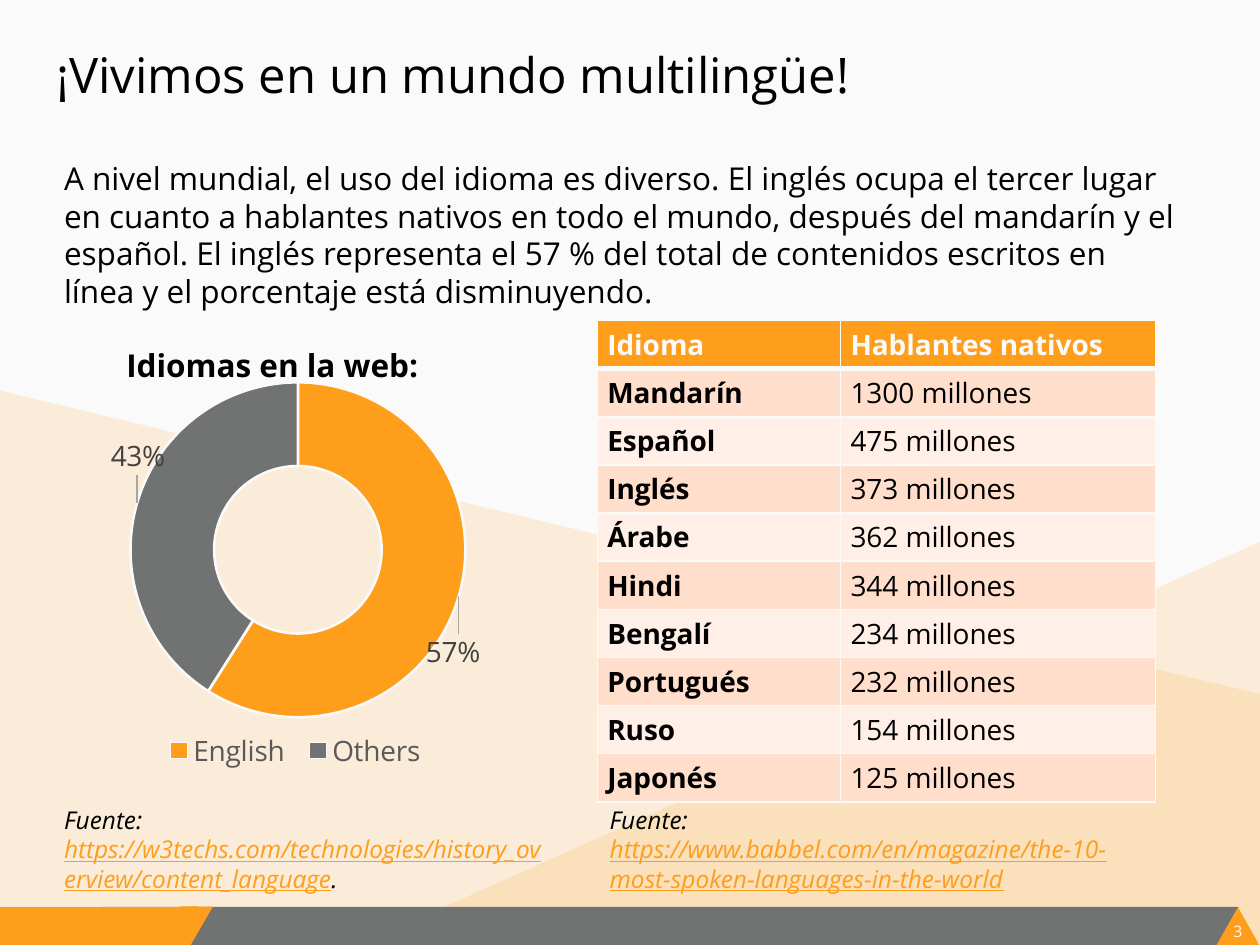
from dataclasses import dataclass

from lxml import etree
from pptx import Presentation
from pptx import util as u
from pptx.chart.data import CategoryChartData
from pptx.dml.color import RGBColor
from pptx.enum import chart as charts, shapes, text
from pptx.oxml import parse_xml
from pptx.oxml.ns import nsdecls, qn

COLORS = {
    "paper": "FAFAFA", "orange": "FF9E1B", "gray": "707372", "black": "000000",
    "peach": "FFDECB", "blush": "FFEFE7", "label": "404040", "legend": "595959",
    "leader": "A6A6A6",
}
FONT = "Open Sans"
LANGUAGES = [
    ("Idioma", "Hablantes nativos"), ("Mandarín", "1300 millones"),
    ("Español", "475 millones"), ("Inglés", "373 millones"),
    ("Árabe", "362 millones"), ("Hindi", "344 millones"),
    ("Bengalí", "234 millones"), ("Portugués", "232 millones"),
    ("Ruso", "154 millones"), ("Japonés", "125 millones"),
]


@dataclass
class Box:
    left: float
    top: float
    width: float
    height: float

    def place(self) -> list:
        return [u.Pt(value) for value in (self.left, self.top, self.width, self.height)]


@dataclass
class Style:
    size: float
    color: str = "black"
    bold: bool = False
    italic: bool = False
    underline: bool = False


@dataclass
class Bar:
    kind: shapes.MSO_SHAPE
    box: Box
    color: str


@dataclass
class Slice:
    name: str
    value: int
    label: str
    color: str
    shift: tuple


@dataclass
class TextBlock:
    box: Box
    runs: list
    inset: tuple = (7.2, 3.6)
    align: text.PP_ALIGN = text.PP_ALIGN.LEFT


BARS = [
    Bar(shapes.MSO_SHAPE.RECTANGLE, Box(58.3, 518.2, 649.4, 22.3), "gray"),
    Bar(shapes.MSO_SHAPE.RECTANGLE, Box(0, 518.4, 108, 22.3), "orange"),
    Bar(shapes.MSO_SHAPE.ISOSCELES_TRIANGLE, Box(694.8, 518.4, 25.2, 22.3), "orange"),
    Bar(shapes.MSO_SHAPE.PARALLELOGRAM, Box(96.5, 518, 25.2, 22.3), "orange"),
    Bar(shapes.MSO_SHAPE.RECTANGLE, Box(103, 518, 10.1, 9.4), "orange"),
]
BACKDROPS = [
    [(0, 223.2), (720, 396.7), (720, 538.6), (0, 540)],
    [(720, 309.6), (720, 540), (205.2, 540)],
]
SLICES = [
    Slice("English", 59, "57%", "orange", (0.07, 0.15)),
    Slice("Others", 41, "43%", "gray", (-0.08, -0.13)),
]
SOURCE = Style(14, italic=True)
LINK = Style(14, "orange", italic=True, underline=True)
TEXTS = [
    TextBlock(Box(701.3, 527, 12.2, 10.8), [("3", Style(9, "paper"))], (0, 0),
              text.PP_ALIGN.CENTER),
    TextBlock(Box(25.2, 21.6, 664.6, 90), [("¡Vivimos en un mundo multilingüe!", Style(28))]),
    TextBlock(Box(341.3, 456.5, 319, 58.3), [
        ("Fuente: ", SOURCE),
        ("https://www.babbel.com/en/magazine/the-10-most-spoken-languages-in-the-world", LINK)]),
    TextBlock(Box(29.5, 456.5, 293.8, 58.3), [
        ("Fuente: ", SOURCE),
        ("https://w3techs.com/technologies/history_overview/content_language", LINK),
        (".", SOURCE)]),
    TextBlock(Box(29.5, 87.2, 653.8, 95), [(
        "A nivel mundial, el uso del idioma es diverso. El inglés ocupa el tercer lugar "
        "en cuanto a hablantes nativos en todo el mundo, después del mandarín y el español. "
        "El inglés representa el 57 % del total de contenidos escritos en línea y el "
        "porcentaje está disminuyendo.", Style(18))]),
]


def rgb(name: str) -> RGBColor:
    return RGBColor.from_string(COLORS[name])


def paint(shape, color: str) -> None:
    shape.shadow.inherit = False
    shape.fill.solid()
    shape.fill.fore_color.rgb = rgb(color)
    shape.line.fill.background()


def format_font(font, style: Style) -> None:
    font.name, font.size = FONT, u.Pt(style.size)
    font.bold, font.italic, font.underline = style.bold, style.italic, style.underline
    font.color.rgb = rgb(style.color)


def draw_backdrop(slide, points: list) -> None:
    corners = [(u.Pt(x), u.Pt(y)) for x, y in points]
    builder = slide.shapes.build_freeform(*corners[0])
    builder.add_line_segments(corners[1:], close=True)
    shape = builder.convert_to_shape()
    paint(shape, "orange")
    color = shape.fill._xPr.find(".//" + qn("a:srgbClr"))
    etree.SubElement(color, qn("a:alpha"), val="15000")


def draw_text(slide, block: TextBlock) -> None:
    frame = slide.shapes.add_textbox(*block.box.place()).text_frame
    frame.word_wrap = True
    frame.margin_left = frame.margin_right = u.Pt(block.inset[0])
    frame.margin_top = frame.margin_bottom = u.Pt(block.inset[1])
    paragraph = frame.paragraphs[0]
    paragraph.alignment = block.align
    for words, style in block.runs:
        run = paragraph.add_run()
        run.text = words
        format_font(run.font, style)


def draw_table(slide, box: Box, widths: list) -> None:
    table = slide.shapes.add_table(len(LANGUAGES), len(widths), *box.place()).table
    for column, width in zip(table.columns, widths):
        column.width = u.Pt(width)
    for row, values in enumerate(LANGUAGES):
        fill = "orange" if row == 0 else ("blush", "peach")[row % 2]
        for column, value in enumerate(values):
            cell = table.cell(row, column)
            cell.margin_left = cell.margin_right = u.Pt(5.76)
            cell.margin_top = cell.margin_bottom = u.Pt(2.88)
            cell.vertical_anchor = text.MSO_ANCHOR.MIDDLE
            for side in "LRTB":
                thick = (row, side) in ((0, "B"), (1, "T"))
                cell._tc.get_or_add_tcPr().append(parse_xml(
                    f'<a:ln{side} {nsdecls("a")} w="{u.Pt(3 if thick else 1)}"><a:solidFill>'
                    f'<a:srgbClr val="{COLORS["paper"]}"/></a:solidFill></a:ln{side}>'))
            cell.fill.solid()
            cell.fill.fore_color.rgb = rgb(fill)
            cell.text_frame.text = value
            style = Style(16, "black" if row else "paper", bold=row == 0 or column == 0)
            format_font(cell.text_frame.paragraphs[0].runs[0].font, style)


def set_layout(parent, index: int, **values) -> None:
    for old in parent.findall(qn("c:layout")):
        parent.remove(old)
    layout = etree.Element(qn("c:layout"))
    manual = etree.SubElement(layout, qn("c:manualLayout"))
    for name, value in values.items():
        etree.SubElement(manual, qn(f"c:{name}"), val=str(value))
    parent.insert(index, layout)


def draw_chart(slide, box: Box) -> None:
    data = CategoryChartData()
    data.categories = [part.name for part in SLICES]
    data.add_series("Series 1", [part.value for part in SLICES])
    chart = slide.shapes.add_chart(charts.XL_CHART_TYPE.DOUGHNUT, *box.place(), data).chart
    title = chart.chart_title
    title.text_frame.text = "Idiomas en la web:"
    format_font(title.text_frame.paragraphs[0].runs[0].font, Style(18, bold=True))
    title.include_in_layout = True
    set_layout(title._element, 1, xMode="edge", yMode="edge", x=0.14, y=0.01)
    chart.has_legend = True
    chart.legend.position = charts.XL_LEGEND_POSITION.BOTTOM
    chart.legend.include_in_layout = False
    format_font(chart.legend.font, Style(16, "legend"))
    set_layout(chart.legend._element, 1, xMode="edge", yMode="edge",
               x=0.21, y=0.89, w=0.57, h=0.09)
    plot = chart.plots[0]
    plot.vary_by_categories = True
    plot._element.find(qn("c:holeSize")).set("val", "75")
    set_layout(plot._element.getparent(), 0, layoutTarget="inner", xMode="edge",
               yMode="edge", x=0.16, y=0.1, w=0.68, h=0.78)
    series = plot.series[0]
    series.data_labels.show_value = True
    format_font(series.data_labels.font, Style(16, "label"))
    series.data_labels._element.append(parse_xml(
        f'<c:leaderLines {nsdecls("c", "a")}><c:spPr><a:ln w="{u.Pt(0.75)}"><a:solidFill>'
        f'<a:srgbClr val="{COLORS["leader"]}"/></a:solidFill></a:ln></c:spPr></c:leaderLines>'))
    for index, part in enumerate(SLICES):
        point = series.points[index]
        point.format.fill.solid()
        point.format.fill.fore_color.rgb = rgb(part.color)
        point.format.line.color.rgb = rgb("paper")
        point.format.line.width = u.Pt(1.5)
        frame = point.data_label.text_frame
        frame.text = part.label
        format_font(frame.paragraphs[0].runs[0].font, Style(16, "label"))
        label = frame._txBody.getparent().getparent()
        set_layout(label, 1, x=part.shift[0], y=part.shift[1])


def main() -> None:
    """Build the slide about languages of the world and save it."""
    presentation = Presentation()
    presentation.slide_width, presentation.slide_height = u.Pt(720), u.Pt(540)
    slide = presentation.slides.add_slide(presentation.slide_layouts[6])
    slide.background.fill.solid()
    slide.background.fill.fore_color.rgb = rgb("paper")
    for points in BACKDROPS:
        draw_backdrop(slide, points)
    for bar in BARS:
        shape = slide.shapes.add_shape(bar.kind, *bar.box.place())
        paint(shape, bar.color)
        if bar.kind == shapes.MSO_SHAPE.PARALLELOGRAM:
            shape.adjustments[0] = 0.58
    draw_table(slide, Box(341.3, 183.2, 319, 275), [139, 180])
    draw_chart(slide, Box(29.5, 187.9, 281.5, 257.8))
    for block in TEXTS:
        draw_text(slide, block)
    presentation.save("out.pptx")


if __name__ == "__main__":
    main()
